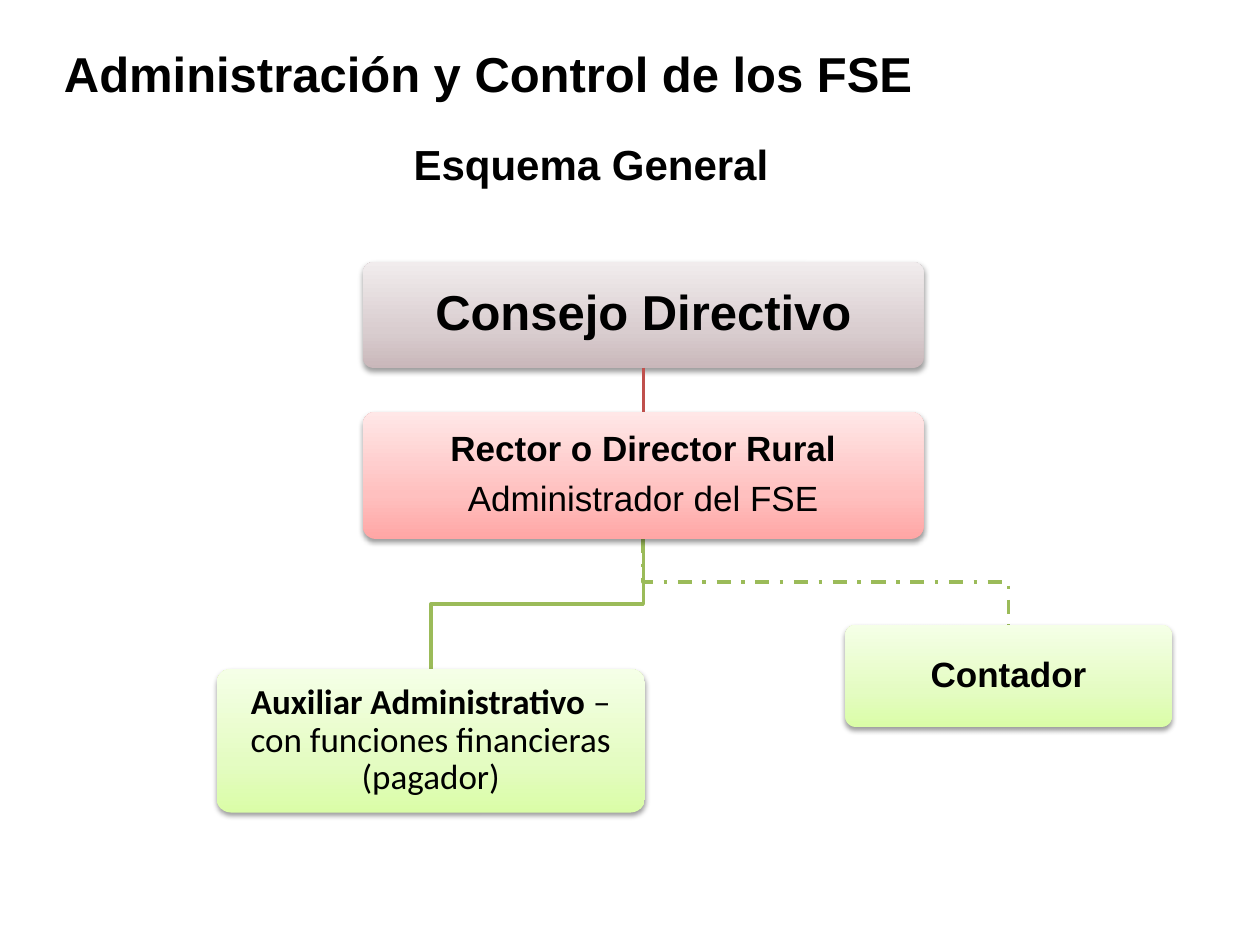
"""Build the organisation chart slide for the administration of the FSE."""
from dataclasses import dataclass

from lxml import etree
from pptx import Presentation
from pptx import util as u
from pptx.dml.color import RGBColor
from pptx.enum import dml, shapes, text
from pptx.oxml import parse_xml
from pptx.oxml.ns import nsdecls, qn


@dataclass(frozen=True)
class Theme:
    ink: str = "000000"
    red: str = "C0504D"
    green: str = "9BBB59"
    mauve_fade: tuple[str, ...] = ("C9B7BA", "D9CDCF", "F1ECED")
    rose_fade: tuple[str, ...] = ("FFA6A5", "FFC0BF", "FFE7E7")
    lime_fade: tuple[str, ...] = ("DAFDA7", "E4FCC2", "F5FFE7")
    font: str = "Arial"
    alt_font: str = "Calibri"
    large: int = 28
    medium: int = 24
    small: int = 20
    line: int = 2


@dataclass(frozen=True)
class Run:
    text: str
    bold: bool = True


@dataclass(frozen=True)
class Box:
    left: float
    top: float
    width: float
    height: float


@dataclass(frozen=True)
class Role:
    box: Box
    fade: tuple[str, ...]
    paragraphs: tuple[tuple[Run, ...], ...]
    size: int
    font: str


T = Theme()
COUNCIL = Role(Box(207.4, 149.8, 320.4, 60.5), T.mauve_fade,
               ((Run("Consejo Directivo"),),), T.large, T.font)
RECTOR = Role(Box(207.4, 235.4, 320.4, 72.6), T.rose_fade,
              ((Run("Rector o Director Rural"),), (Run("Administrador del FSE", False),)),
              T.small, T.font)
ASSISTANT = Role(Box(123.8, 382.3, 244.8, 82), T.lime_fade,
                 ((Run("Auxiliar Administrativo "),
                   Run("– con funciones financieras (pagador)", False)),),
                 T.small, T.alt_font)
ACCOUNTANT = Role(Box(483.1, 357.1, 186.5, 58.3), T.lime_fade,
                  ((Run("Contador"),),), T.small, T.font)


def style_paragraph(p, runs: tuple[Run, ...], size: int, font: str) -> None:
    for run in runs:
        r = p.add_run()
        r.text = run.text
        if len(runs) > 1:
            r.font.bold = run.bold
    if len(runs) == 1:
        p.font.bold = runs[0].bold
    p.font.size = u.Pt(size)
    p.font.name = font
    p.font.color.rgb = RGBColor.from_string(T.ink)


def add_heading(s, box: Box, words: str, size: int, align, anchor) -> None:
    sp = s.shapes.add_textbox(*map(u.Pt, (box.left, box.top, box.width, box.height)))
    tf = sp.text_frame
    tf.word_wrap = True
    tf.vertical_anchor = anchor
    tf.paragraphs[0].alignment = align
    style_paragraph(tf.paragraphs[0], (Run(words),), size, T.font)


def add_fade_and_shadow(sp, fade: tuple[str, ...]) -> None:
    stops = "".join(f'<a:gs pos="{pos}"><a:srgbClr val="{color}"/></a:gs>'
                    for pos, color in zip((0, 35000, 100000), fade))
    gradient = parse_xml(f'<a:gradFill {nsdecls("a")} rotWithShape="1"><a:gsLst>{stops}</a:gsLst>'
                         '<a:lin ang="16200000" scaled="1"/></a:gradFill>')
    shadow = parse_xml(f'<a:effectLst {nsdecls("a")}><a:outerShdw blurRad="{u.Pt(3.1)}" '
                       f'dist="{u.Pt(1.6)}" dir="5400000" rotWithShape="0">'
                       f'<a:srgbClr val="{T.ink}"><a:alpha val="38000"/></a:srgbClr>'
                       '</a:outerShdw></a:effectLst>')
    sp.shadow.inherit = False
    props = sp._element.spPr
    props.find(qn("a:prstGeom")).addnext(gradient)
    props.replace(props.find(qn("a:effectLst")), shadow)


def add_role(s, role: Role):
    b = role.box
    sp = s.shapes.add_shape(shapes.MSO_SHAPE.ROUNDED_RECTANGLE,
                            *map(u.Pt, (b.left, b.top, b.width, b.height)))
    sp.adjustments[0] = 0.1
    sp.line.fill.background()
    add_fade_and_shadow(sp, role.fade)
    tf = sp.text_frame
    tf.word_wrap = True
    tf.vertical_anchor = text.MSO_ANCHOR.MIDDLE
    tf.margin_left = tf.margin_right = tf.margin_top = tf.margin_bottom = u.Pt(8)
    for i, runs in enumerate(role.paragraphs):
        p = tf.add_paragraph() if i else tf.paragraphs[0]
        p.alignment = text.PP_ALIGN.CENTER
        p.line_spacing = 0.9
        p.space_after = u.Pt(role.size * 0.35)
        style_paragraph(p, runs, role.size, role.font)
    return sp


def style_line(line, color: str) -> None:
    line.color.rgb = RGBColor.from_string(color)
    line.width = u.Pt(T.line)


def add_straight_link(s, parent, child, color: str) -> None:
    sp = s.shapes.add_connector(shapes.MSO_CONNECTOR.STRAIGHT, 0, 0, 0, 0)
    sp.begin_connect(parent, 2)
    sp.end_connect(child, 0)
    style_line(sp.line, color)
    etree.SubElement(sp._element.spPr, qn("a:effectLst"))


def add_elbow_link(s, parent: Box, child: Box, color: str, dash=None) -> None:
    start_x, end_x = (b.left + b.width / 2 for b in (parent, child))
    start_y, end_y = parent.top + parent.height, child.top
    bend_y = (start_y + end_y) / 2
    corners = [(start_x, bend_y), (end_x, bend_y), (end_x, end_y)]
    builder = s.shapes.build_freeform(u.Pt(start_x), u.Pt(start_y))
    builder.add_line_segments([(u.Pt(x), u.Pt(y)) for x, y in corners], close=False)
    sp = builder.convert_to_shape()
    sp.shadow.inherit = False
    sp.fill.background()
    style_line(sp.line, color)
    if dash is not None:
        sp.line.dash_style = dash


def main() -> None:
    prs = Presentation()
    prs.slide_width, prs.slide_height = u.Pt(720), u.Pt(540)
    s = prs.slides.add_slide(prs.slide_layouts[6])
    add_heading(s, Box(29.5, 9.4, 648, 64.8), "Administración y Control de los FSE",
                T.large, text.PP_ALIGN.LEFT, text.MSO_ANCHOR.MIDDLE)
    add_heading(s, Box(21.6, 75.6, 632.2, 36), "Esquema General",
                T.medium, text.PP_ALIGN.CENTER, text.MSO_ANCHOR.TOP)
    add_elbow_link(s, RECTOR.box, ASSISTANT.box, T.green)
    add_elbow_link(s, RECTOR.box, ACCOUNTANT.box, T.green, dml.MSO_LINE.DASH_DOT)
    council, rector, *_ = [add_role(s, role) for role in (COUNCIL, RECTOR, ASSISTANT, ACCOUNTANT)]
    add_straight_link(s, council, rector, T.red)
    prs.save("out.pptx")


if __name__ == "__main__":
    main()
